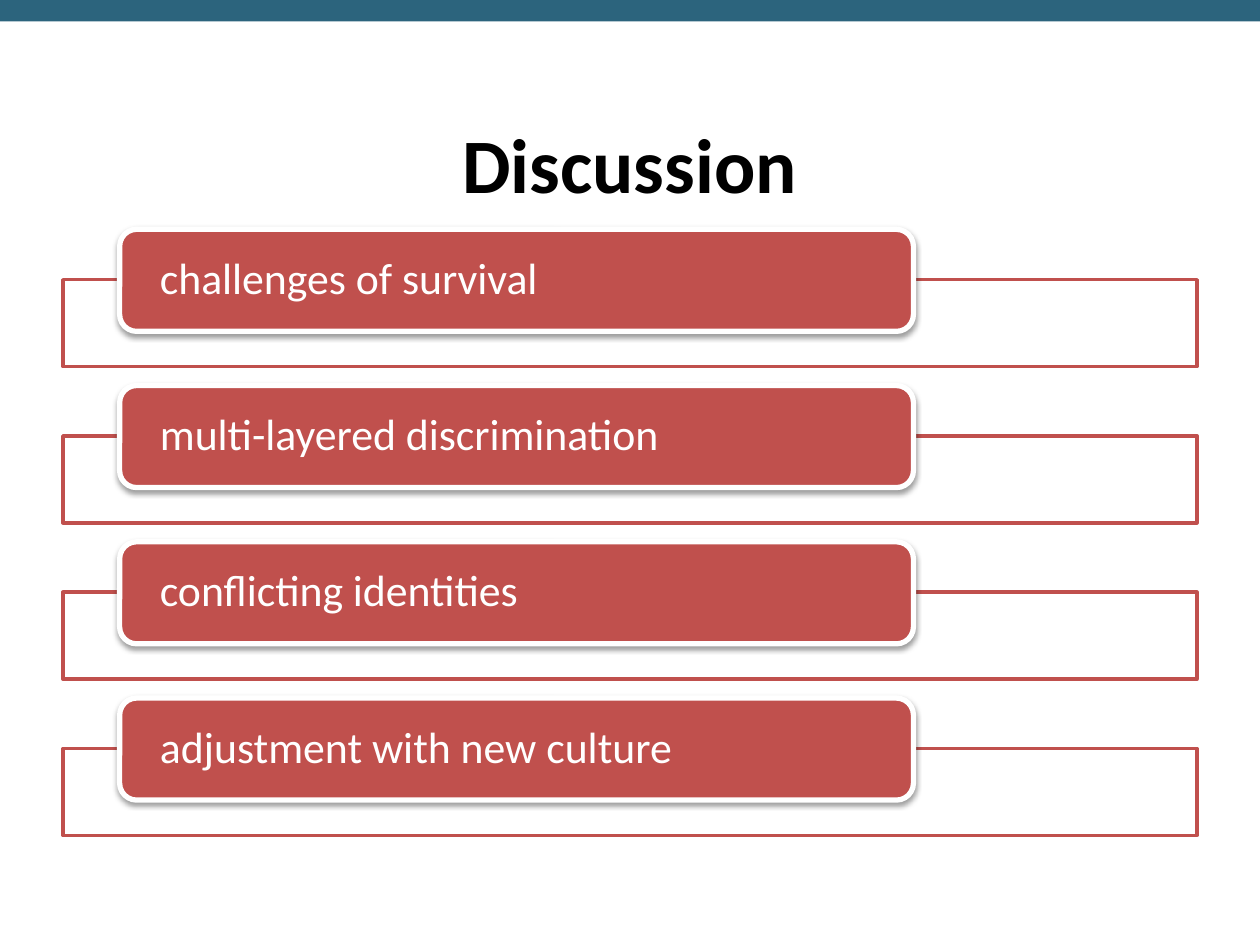
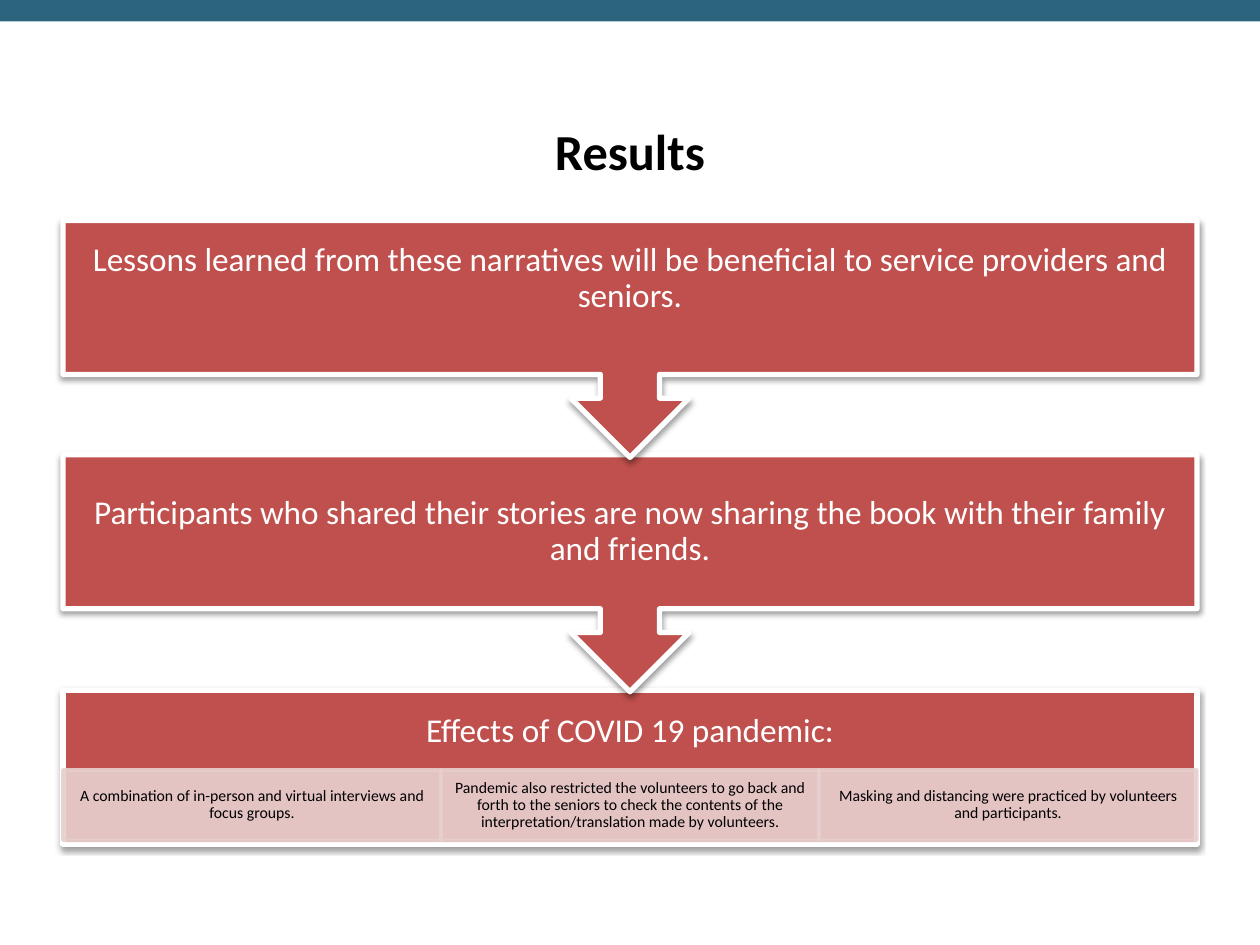
from dataclasses import dataclass, replace

from lxml.etree import SubElement
from pptx import Presentation
from pptx.dml.color import RGBColor
from pptx.enum.shapes import MSO_SHAPE as Preset
from pptx.enum.text import MSO_ANCHOR as Anchor, MSO_AUTO_SIZE as AutoSize, PP_ALIGN as Align
from pptx.oxml.ns import qn
from pptx.util import Inches, Pt

DECK_WIDTH, DECK_HEIGHT = Inches(10), Inches(7.5)
COLUMN, ROW = DECK_WIDTH / 20, DECK_HEIGHT / 15
TEAL, RED, PINK, WHITE, BLACK = "2C647D", "C0504D", "E8D0D0", "FFFFFF", "000000"
FONT = "Calibri"


@dataclass(frozen=True)
class Area:
    column: float
    row: float
    columns: float
    rows: float

    def place(self) -> tuple[int, int, int, int]:
        return (round(self.column * COLUMN), round(self.row * ROW),
                round(self.columns * COLUMN), round(self.rows * ROW))

    def shifted(self, columns: float = 0, rows: float = 0) -> "Area":
        return replace(self, column=self.column + columns, row=self.row + rows)


@dataclass(frozen=True)
class Style:
    fill: str
    line: str | None = None
    line_width: float = 0
    preset: Preset = Preset.RECTANGLE
    fill_alpha: int = 100
    line_alpha: int = 100
    shadow: bool = False
    text_color: str = WHITE
    text_size: float = 19
    align: Align = Align.CENTER
    insets: tuple[float, float, float, float] = (0.15, 0.15, 0.15, 0.15)


BAND = Style(TEAL)
FRAME = Style(WHITE, RED, 2, fill_alpha=90)
PANEL = Style(RED, WHITE, 3, shadow=True)
BAR = replace(PANEL, preset=Preset.ROUNDED_RECTANGLE, text_size=25,
              align=Align.LEFT, insets=(0.28, 0, 0.28, 0))
CALLOUT = replace(PANEL, preset=Preset.DOWN_ARROW_CALLOUT)
RAISED_CALLOUT = replace(CALLOUT, insets=(0.15, 0.15, 0.15, 0.45))
HEADING = replace(PANEL, insets=(0.15, 0.15, 0.15, 0.71))
CELL = Style(PINK, PINK, 2, fill_alpha=90, line_alpha=90, text_color=BLACK,
             text_size=9, insets=(0.07, 0.01, 0.07, 0.01))

TITLE_AREA = Area(1, 1.34, 18, 2.5)
BAND_AREA = Area(0, 0, 20, 0.34)
FRAME_AREA = Area(1, 4.44, 18, 1.38)
BAR_AREA = Area(1.9, 3.64, 12.6, 1.62)
BAR_STEP = 2.48
CALLOUT_AREA = Area(1, 3.5, 18, 3.76)
CALLOUT_STEP = 3.72
HEADING_AREA = Area(1, 10.96, 18, 2.44)
CELL_AREA = Area(1, 12.22, 6, 1.12)

THEMES = (
    "challenges of survival",
    "multi-layered discrimination",
    "conflicting identities",
    "adjustment with new culture",
)
LESSON = "Lessons learned from these narratives will be beneficial to service providers and seniors."
SHARING = "Participants who shared their stories are now sharing the book with their family and friends."
EFFECTS = (
    "A combination of in-person and virtual interviews and focus groups.",
    "Pandemic also restricted the volunteers to go back and forth to the seniors to check "
    "the contents of the interpretation/translation made by volunteers.",
    "Masking and distancing were practiced by volunteers and participants.",
)


def rgb(color: str) -> RGBColor:
    return RGBColor.from_string(color)


def set_values(target, values: dict) -> None:
    for name, value in values.items():
        setattr(target, name, value)


def set_alpha(color_parent, percent: int) -> None:
    if percent < 100:
        color = color_parent.find(qn("a:solidFill")).find(qn("a:srgbClr"))
        SubElement(color, qn("a:alpha")).set("val", str(percent * 1000))


def add_shadow(shape) -> None:
    effects = shape.element.spPr.find(qn("a:effectLst"))
    shadow = SubElement(effects, qn("a:outerShdw"), blurRad="40000", dist="20000",
                        dir="5400000", rotWithShape="0")
    color = SubElement(shadow, qn("a:srgbClr"), val=BLACK)
    SubElement(color, qn("a:alpha"), val="38000")


def write(shape, text: str, size: float, color: str, align: Align,
          spacing: float, bold: bool = False) -> None:
    para = shape.text_frame.paragraphs[0]
    set_values(para, {"alignment": align, "line_spacing": spacing})
    span = para.add_run()
    span.text = text
    set_values(span.font, {"name": FONT, "size": Pt(size), "bold": bold})
    span.font.color.rgb = rgb(color)


def add_box(page, area: Area, style: Style, text: str = ""):
    box = page.shapes.add_shape(style.preset, *area.place())
    box.shadow.inherit = False
    box.fill.solid()
    box.fill.fore_color.rgb = rgb(style.fill)
    set_alpha(box.element.spPr, style.fill_alpha)
    if style.line:
        box.line.color.rgb = rgb(style.line)
        box.line.width = Pt(style.line_width)
        set_alpha(box.element.spPr.find(qn("a:ln")), style.line_alpha)
    else:
        box.line.fill.background()
    if style.shadow:
        add_shadow(box)
    if text:
        left, top, right, bottom = map(Inches, style.insets)
        set_values(box.text_frame, {
            "word_wrap": True, "vertical_anchor": Anchor.MIDDLE,
            "margin_left": left, "margin_top": top,
            "margin_right": right, "margin_bottom": bottom,
        })
        write(box, text, style.text_size, style.text_color, style.align, 0.9)
    return box


def add_page(deck, title: str, size: float, bottom_inset: float = 0.05):
    page = deck.slides.add_slide(deck.slide_layouts.get_by_name("Title Only"))
    heading = page.shapes.title
    set_values(heading, dict(zip(("left", "top", "width", "height"), TITLE_AREA.place())))
    set_values(heading.text_frame, {
        "auto_size": AutoSize.NONE, "vertical_anchor": Anchor.MIDDLE,
        "margin_bottom": Inches(bottom_inset),
    })
    write(heading, title, size, BLACK, Align.CENTER, 1.0, bold=True)
    return page


def add_master_band(deck, page) -> None:
    band = add_box(page, BAND_AREA, BAND)
    deck.slide_master.shapes.element.insert(2, band.element)


def draw_discussion(page) -> None:
    for index, theme in enumerate(THEMES):
        offset = index * BAR_STEP
        add_box(page, FRAME_AREA.shifted(rows=offset), FRAME)
        add_box(page, BAR_AREA.shifted(rows=offset), BAR, theme)


def draw_results(page) -> None:
    add_box(page, HEADING_AREA, HEADING, "Effects of COVID 19 pandemic:")
    for index, effect in enumerate(EFFECTS):
        add_box(page, CELL_AREA.shifted(columns=index * CELL_AREA.columns), CELL, effect)
    add_box(page, CALLOUT_AREA.shifted(rows=CALLOUT_STEP), CALLOUT, SHARING)
    add_box(page, CALLOUT_AREA, RAISED_CALLOUT, LESSON)


def main() -> None:
    deck = Presentation()
    set_values(deck, {"slide_width": DECK_WIDTH, "slide_height": DECK_HEIGHT})
    discussion = add_page(deck, "Discussion", 44)
    add_master_band(deck, discussion)
    draw_discussion(discussion)
    draw_results(add_page(deck, "Results", 28.8, bottom_inset=0.25))
    deck.save("out.pptx")


if __name__ == "__main__":
    main()
